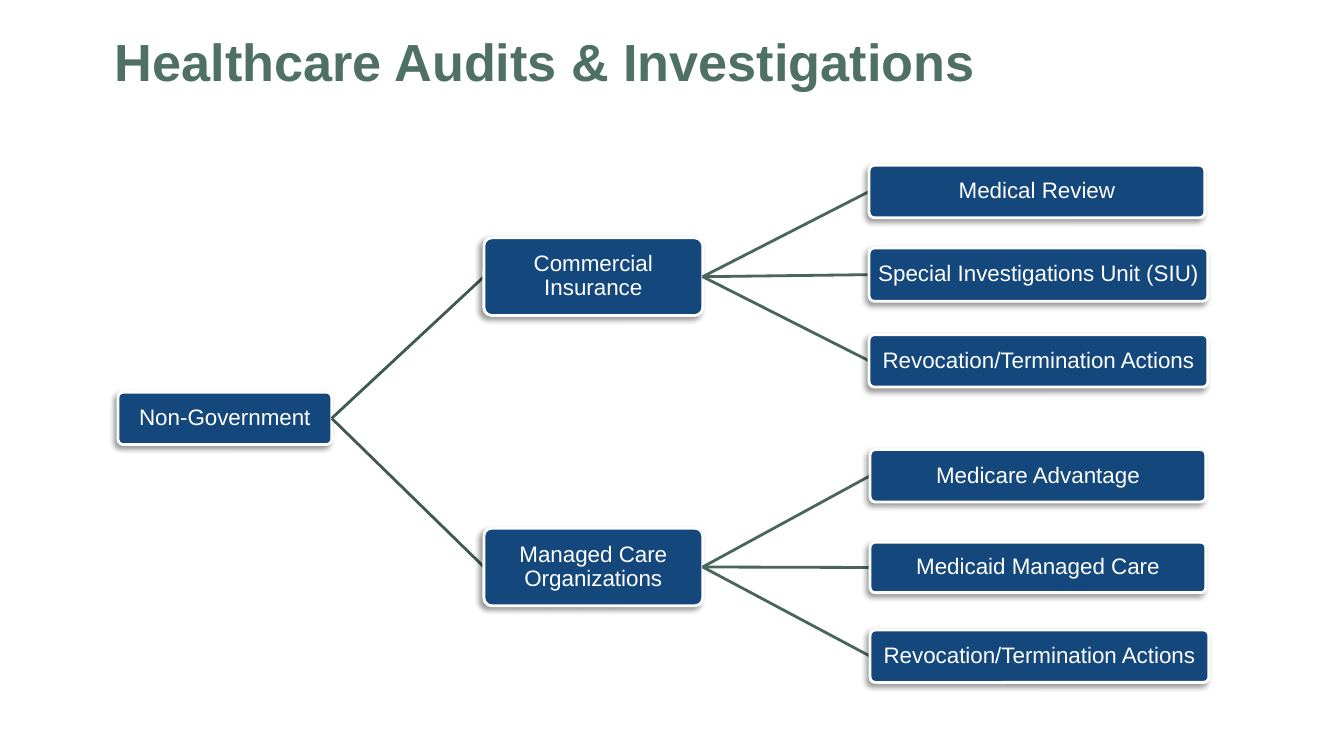
import pptx
import pptx.util
import pptx.dml.color
import pptx.enum.shapes
import pptx.enum.text
import pptx.oxml
import pptx.oxml.ns

COLOURS = {
    "box": "14487C",
    "white": "FFFFFF",
    "title": "4F7065",
    "first_link": "3F5A51",
    "second_link": "48665C",
    "shadow": "000000",
}

# Each node: text, (left, top, width, height) in px, children
TREE = ("Non-Government", (117, 389, 212, 52), [
    ("Commercial Insurance", (480, 236, 217, 77), [
        ("Medical Review", (862, 164, 333, 52), []),
        ("Special Investigations Unit (SIU)", (862, 246, 336, 53), []),
        ("Revocation/Termination Actions", (862, 332, 336, 52), []),
    ]),
    ("Managed Care Organizations", (480, 524, 217, 77), [
        ("Medicare Advantage", (863, 446, 333, 52), []),
        ("Medicaid Managed Care", (863, 538, 333, 50), []),
        ("Revocation/Termination Actions", (863, 625, 336, 52), []),
    ]),
])


def px(length):
    """100 px to the inch."""
    return pptx.util.Emu(length * 9144)


def colour(name):
    return pptx.dml.color.RGBColor.from_string(COLOURS[name])


class TreeSlide:
    font_name = "Arial"
    line_width = pptx.util.Pt(2)
    left_site, right_site = 1, 3

    def __init__(self, deck):
        self.page = deck.slides.add_slide(deck.slide_layouts[6])

    def set_text(self, frame, text, frame_format, para_format, font_format, ink):
        for name, value in {"word_wrap": True, **frame_format}.items():
            setattr(frame, name, value)
        para = frame.paragraphs[0]
        for name, value in para_format.items():
            setattr(para, name, value)
        span = para.add_run()
        span.text = text
        for name, value in {"name": self.font_name, **font_format}.items():
            setattr(span.font, name, value)
        span.font.color.rgb = colour(ink)

    def title(self, text, area):
        box = self.page.shapes.add_textbox(*map(px, area))
        self.set_text(
            box.text_frame, text,
            {"margin_left": 0, "margin_top": 0, "margin_right": px(20), "margin_bottom": 0},
            {"line_spacing": pptx.util.Pt(24)},
            {"size": pptx.util.Pt(37.3), "bold": True}, "title")

    def shadow(self, shape):
        shape.shadow.inherit = False
        effects = shape._element.spPr.find(pptx.oxml.ns.qn("a:effectLst"))
        effects.append(pptx.oxml.parse_xml(
            f'<a:outerShdw {pptx.oxml.ns.nsdecls("a")} blurRad="50800" dist="38100" '
            f'dir="8100000" algn="tr" rotWithShape="0"><a:srgbClr val="{COLOURS["shadow"]}">'
            '<a:alpha val="40000"/></a:srgbClr></a:outerShdw>'))

    def node(self, text, area):
        box = self.page.shapes.add_shape(
            pptx.enum.shapes.MSO_SHAPE.ROUNDED_RECTANGLE, *map(px, area))
        box.adjustments[0] = 0.1
        box.fill.solid()
        box.fill.fore_color.rgb = colour("box")
        box.line.color.rgb = colour("white")
        box.line.width = self.line_width
        self.shadow(box)
        margins = {f"margin_{side}": px(1) for side in ("left", "top", "right", "bottom")}
        self.set_text(
            box.text_frame, text,
            {"vertical_anchor": pptx.enum.text.MSO_ANCHOR.MIDDLE, **margins},
            {"alignment": pptx.enum.text.PP_ALIGN.CENTER, "line_spacing": 0.9},
            {"size": pptx.util.Pt(16)}, "white")
        return box

    def link(self, parent, ink):
        line = self.page.shapes.add_connector(
            pptx.enum.shapes.MSO_CONNECTOR.STRAIGHT, 0, 0, 0, 0)
        line.begin_connect(parent, self.right_site)
        line.line.color.rgb = colour(ink)
        line.line.width = self.line_width
        line._element.spPr.append(pptx.oxml.parse_xml(
            f'<a:effectLst {pptx.oxml.ns.nsdecls("a")}/>'))
        return line

    def branch(self, tree, inks):
        text, area, children = tree
        box = self.node(text, area)
        for child in children:
            # The line is added first so that it lies behind the child box
            line = self.link(box, inks[0])
            line.end_connect(self.branch(child, inks[1:]), self.left_site)
        return box


def main():
    deck = pptx.Presentation()
    deck.slide_width, deck.slide_height = px(1333), px(750)
    slide = TreeSlide(deck)

    # Tree of audit sources
    slide.branch(TREE, ["first_link", "second_link"])

    # Heading
    slide.title("Healthcare Audits & Investigations", (114, 58, 1186, 30))

    deck.save("out.pptx")


if __name__ == "__main__":
    main()
